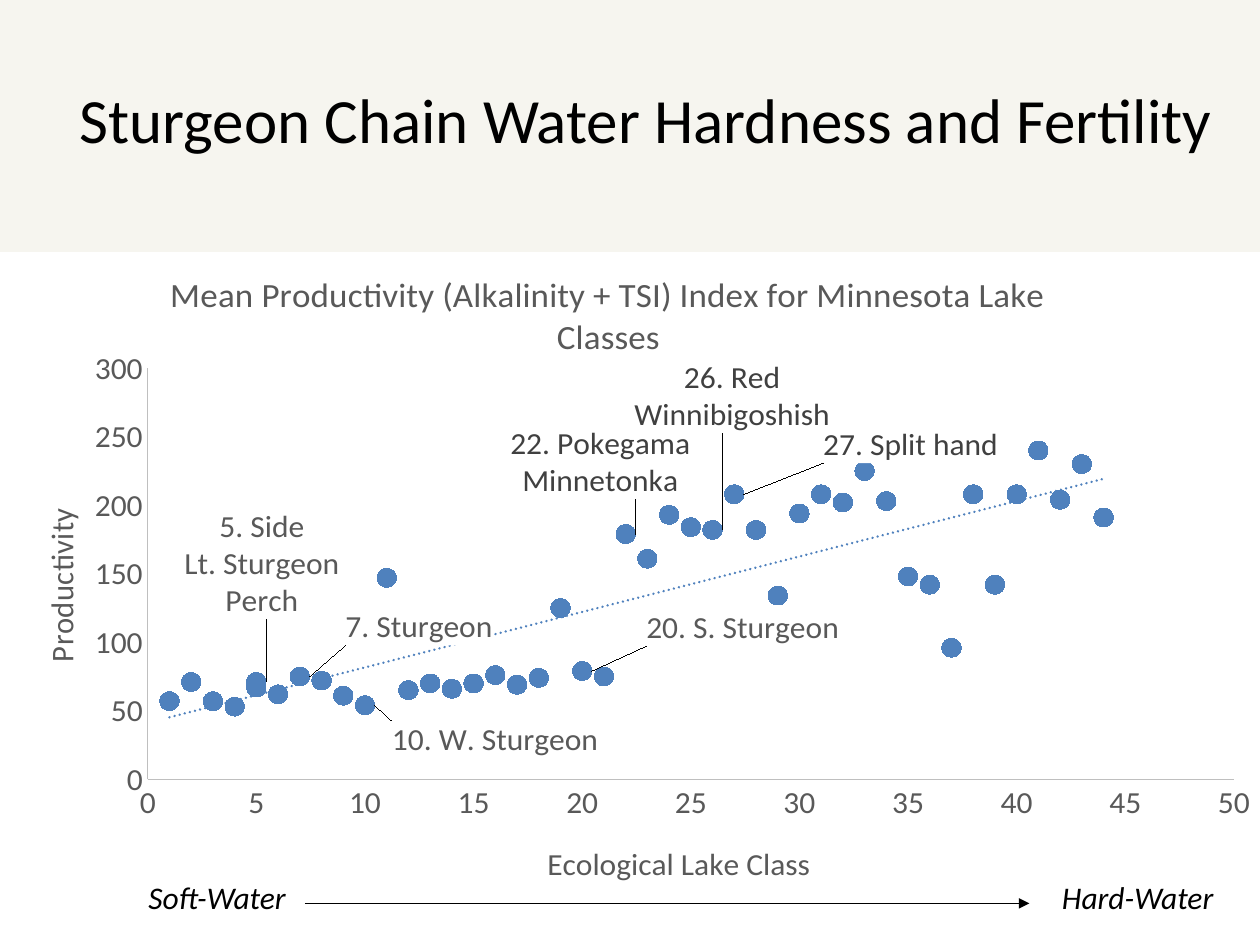
from lxml import etree
from pptx import Presentation, util as u
from pptx.chart.data import XyChartData
from pptx.chart.datalabel import DataLabels
from pptx.dml.color import RGBColor
from pptx.enum import chart as charts, shapes, text
from pptx.oxml import parse_xml
from pptx.oxml.ns import nsdecls, qn

FONT = "Calibri"
BLUE, GREY, DARK, PALE, BLACK = "4F81BD", "595959", "404040", "BFBFBF", "000000"

# Ragged lower edge of the sky, left to right, in inches
RIDGE = [
    (0, 2.59), (.14, 2.49), (.35, 2.36), (.5, 2.29), (.61, 2.21), (.72, 2.13), (.85, 2.08),
    (.9, 2.09), (.9, 2.15), (1.12, 2.06), (1.35, 2.01), (1.58, 1.92), (1.8, 1.77), (1.96, 1.64),
    (2.02, 1.58), (2.1, 1.55), (2.31, 1.5), (2.44, 1.61), (2.48, 1.57), (2.49, 1.51),
    (2.53, 1.52), (2.6, 1.59), (2.67, 1.6), (2.78, 1.52), (2.82, 1.49), (2.91, 1.52),
    (2.99, 1.54), (3.09, 1.59), (3.12, 1.65), (3.27, 1.64), (3.3, 1.75), (3.42, 1.72),
    (3.47, 1.77), (3.53, 1.96), (3.78, 1.9), (3.95, 1.8), (4.03, 1.78), (4.22, 1.81),
    (4.29, 1.9), (4.33, 1.92), (4.4, 1.91), (4.41, 1.96), (4.38, 2.02), (4.4, 2.08),
    (4.48, 2.02), (4.58, 1.94), (4.72, 1.91), (4.86, 1.93), (4.93, 2.02), (4.98, 1.99),
    (5.14, 1.93), (5.25, 1.9), (5.34, 1.86), (5.52, 1.88), (5.6, 1.94), (5.65, 1.89),
    (5.7, 1.88), (5.8, 1.89), (5.95, 1.86), (6.01, 1.9), (6.13, 1.93), (6.33, 1.99),
    (6.38, 2.02), (6.41, 1.99), (6.47, 1.92), (6.63, 1.91), (6.79, 1.94), (6.91, 2.02),
    (7, 2.08), (7.01, 2.03), (6.99, 1.96), (7.01, 1.91), (7.08, 1.92), (7.13, 1.9),
    (7.2, 1.81), (7.42, 1.78), (7.52, 1.8), (7.7, 1.89), (8, 1.96), (8.07, 1.77),
    (8.13, 1.72), (8.27, 1.75), (8.31, 1.64), (8.48, 1.65), (8.53, 1.59), (8.64, 1.54),
    (8.72, 1.52), (8.83, 1.49), (8.88, 1.52), (9, 1.6), (9.07, 1.59), (9.16, 1.52),
    (9.21, 1.51), (9.22, 1.57), (9.27, 1.61), (9.42, 1.5), (9.55, 1.53), (9.71, 1.55),
    (9.82, 1.64), (9.87, 1.7), (10, 1.77),
]

PRODUCTIVITY = [
    57, 71, 57, 53, 67, 62, 75, 72, 61, 54, 147, 65, 70, 66, 70, 76, 69, 74, 125, 79, 75, 179,
    161, 193, 184, 182, 208, 182, 134, 194, 208, 202, 225, 203, 148, 142, 96, 208, 142, 208,
    240, 204, 230, 191,
]
POINTS = list(enumerate(PRODUCTIVITY, 1)) + [(5, 71)]

# Point index, label, shift from the point as shares of the chart, colour
LAKE_LABELS = [
    (6, "7. Sturgeon", .025, -.08, GREY),
    (9, "10. W. Sturgeon", .01, .055, GREY),
    (19, "20. S. Sturgeon", .04, -.07, GREY),
    (21, "22. Pokegama\nMinnetonka", -.105, -.115, DARK),
    (25, "26. Red\nWinnibigoshish", -.075, -.215, DARK),
    (26, "27. Split hand", .06, -.08, DARK),
    (44, "5. Side\nLt. Sturgeon\nPerch", -.07, -.19, GREY),
]


def color(value):
    return RGBColor.from_string(value)


def style(font, size, value=BLACK, italic=False):
    font.name, font.size, font.bold, font.italic = FONT, u.Pt(size), False, italic
    font.color.rgb = color(value)


def add_label(slide, box, words, size=18, align=text.PP_ALIGN.LEFT, italic=False):
    shape = slide.shapes.add_textbox(*map(u.Inches, box))
    shape.text_frame.word_wrap = True
    paragraph = shape.text_frame.paragraphs[0]
    paragraph.text, paragraph.alignment = words, align
    style(paragraph.runs[0].font, size, italic=italic)


def add_sky(slide):
    builder = slide.shapes.build_freeform(*RIDGE[0], scale=u.Inches(1))
    builder.add_line_segments(RIDGE[1:] + [(10, 0), (0, 0)], close=True)
    shape = builder.convert_to_shape()
    shape.shadow.inherit = False
    shape.line.fill.background()
    shape.fill.solid()
    shape.fill.fore_color.rgb = color("EEECE1")
    tint = shape._element.spPr.find(".//" + qn("a:srgbClr"))
    etree.SubElement(tint, qn("a:alpha"), val="50000")


def place(element, after, **shares):
    """Give a chart part a manual layout, put after its child of the given tag."""
    for old in element.findall(qn("c:layout")):
        element.remove(old)
    modes = "".join(f'<c:{key}Mode val="edge"/>' for key in shares
                    if key in "xy" and after != "c:idx")
    target = '<c:layoutTarget val="inner"/>' if "w" in shares else ""
    values = "".join(f'<c:{key} val="{share}"/>' for key, share in shares.items())
    layout = parse_xml(f'<c:layout {nsdecls("c")}><c:manualLayout>{target}{modes}{values}'
                       '</c:manualLayout></c:layout>')
    if after:
        element.find(qn(after)).addnext(layout)
    else:
        element.insert(0, layout)


def area_fill(value=None):
    fill = f'<a:solidFill><a:srgbClr val="{value}"/></a:solidFill>' if value else "<a:noFill/>"
    return parse_xml(f'<c:spPr {nsdecls("c", "a")}>{fill}<a:ln><a:noFill/></a:ln></c:spPr>')


def set_title(owner, title, words, size, x, y):
    """Title a chart or an axis at the given share of the chart."""
    owner.has_title = True
    title = title()
    title.text_frame.text = words
    style(title.text_frame.paragraphs[0].runs[0].font, size, GREY)
    place(title._element, "c:tx", x=x, y=y)


def format_axis(axis, maximum, step, words, x, y):
    axis.minimum_scale, axis.maximum_scale, axis.major_unit = 0, maximum, step
    axis.has_major_gridlines = False
    axis.major_tick_mark = axis.minor_tick_mark = charts.XL_TICK_MARK.NONE
    axis.tick_labels.number_format, axis.tick_labels.number_format_is_linked = "0", False
    style(axis.tick_labels.font, 18, GREY)
    axis.format.line.color.rgb = color(PALE)
    axis.format.line.width = u.Pt(.75)
    set_title(axis, lambda: axis.axis_title, words, 18, x, y)


def label_lakes(series):
    labels = series._element.get_or_add_dLbls()
    DataLabels(labels).show_value = False
    for index, words, x, y, value in LAKE_LABELS:
        label = series.points[index].data_label
        label.text_frame.text = words
        for paragraph in label.text_frame.paragraphs:
            style(paragraph.runs[0].font, 18, value)
        label.position = charts.XL_LABEL_POSITION.RIGHT
        element = label._dLbl
        place(element, "c:idx", x=x, y=y)
        for old in element.findall(qn("c:spPr")):
            element.remove(old)
        element.find(qn("c:tx")).addnext(area_fill("FFFFFF"))
    for old in labels.findall(qn("c:showLeaderLines")):
        labels.remove(old)
    labels.append(parse_xml(
        f'<c:extLst {nsdecls("c")}><c:ext uri="{{CE6537A1-D6FC-4f65-9D91-7224C49458BB}}" '
        'xmlns:c15="http://schemas.microsoft.com/office/drawing/2012/chart">'
        '<c15:showLeaderLines val="1"/></c:ext></c:extLst>'))


def add_trend(series):
    series._element.find(qn("c:xVal")).addprevious(parse_xml(
        f'<c:trendline {nsdecls("c", "a")}><c:spPr><a:ln w="19050" cap="rnd"><a:solidFill>'
        f'<a:srgbClr val="{BLUE}"/></a:solidFill><a:prstDash val="sysDot"/></a:ln></c:spPr>'
        '<c:trendlineType val="linear"/><c:dispRSqr val="0"/><c:dispEq val="0"/>'
        '</c:trendline>'))


def add_productivity_chart(slide, box):
    data = XyChartData()
    lakes = data.add_series("Series 1")
    for lake_class, productivity in POINTS:
        lakes.add_data_point(lake_class, productivity)
    chart = slide.shapes.add_chart(
        charts.XL_CHART_TYPE.XY_SCATTER, *map(u.Inches, box), data).chart
    style(chart.font, 18)
    chart.has_legend = False
    set_title(chart, lambda: chart.chart_title,
              "Mean Productivity (Alkalinity + TSI) Index for Minnesota Lake Classes",
              20, .115, .02)
    format_axis(chart.category_axis, 50, 5, "Ecological Lake Class", .42, .94)
    format_axis(chart.value_axis, 300, 50, "Productivity", .01, .41)

    plot_area = chart._chartSpace.chart.plotArea
    place(plot_area, None, x=.102, y=.187, w=.877, h=.661)
    plot_area.append(area_fill("FFFFFF"))
    chart._chartSpace.chart.addnext(area_fill())

    chart.plots[0].vary_by_categories = False
    series = chart.plots[0].series[0]
    series.format.line.fill.background()
    series.marker.style, series.marker.size = charts.XL_MARKER_STYLE.CIRCLE, 11
    series.marker.format.fill.solid()
    series.marker.format.fill.fore_color.rgb = color(BLUE)
    series.marker.format.line.color.rgb = color(BLUE)
    label_lakes(series)
    add_trend(series)


def add_hardness_scale(slide, top):
    """Soft-to-hard arrow under the horizontal axis."""
    add_label(slide, (1.08, top, 2.58, .42), "Soft-Water", italic=True)
    add_label(slide, (8.33, top, 1.5, .42), "Hard-Water", italic=True)
    middle = top + .25
    arrow = slide.shapes.add_connector(
        shapes.MSO_CONNECTOR.STRAIGHT, *map(u.Inches, (2.42, middle, 8.17, middle)))
    arrow.line.color.rgb = color(BLACK)
    arrow.line.width = u.Pt(.75)
    etree.SubElement(arrow.line._get_or_add_ln(), qn("a:tailEnd"), type="triangle")
    etree.SubElement(arrow._element.spPr, qn("a:effectLst"))


def main():
    presentation = Presentation()
    presentation.slide_width, presentation.slide_height = u.Inches(10), u.Inches(7.5)
    slide = presentation.slides.add_slide(presentation.slide_layouts[6])
    add_sky(slide)
    add_productivity_chart(slide, (.17, 2, 9.83, 5.08))
    add_label(slide, (.25, .59, 9.75, .71), "Sturgeon Chain Water Hardness and Fertility",
              size=36, align=text.PP_ALIGN.CENTER)
    add_hardness_scale(slide, 6.92)
    presentation.save("out.pptx")


if __name__ == "__main__":
    main()
